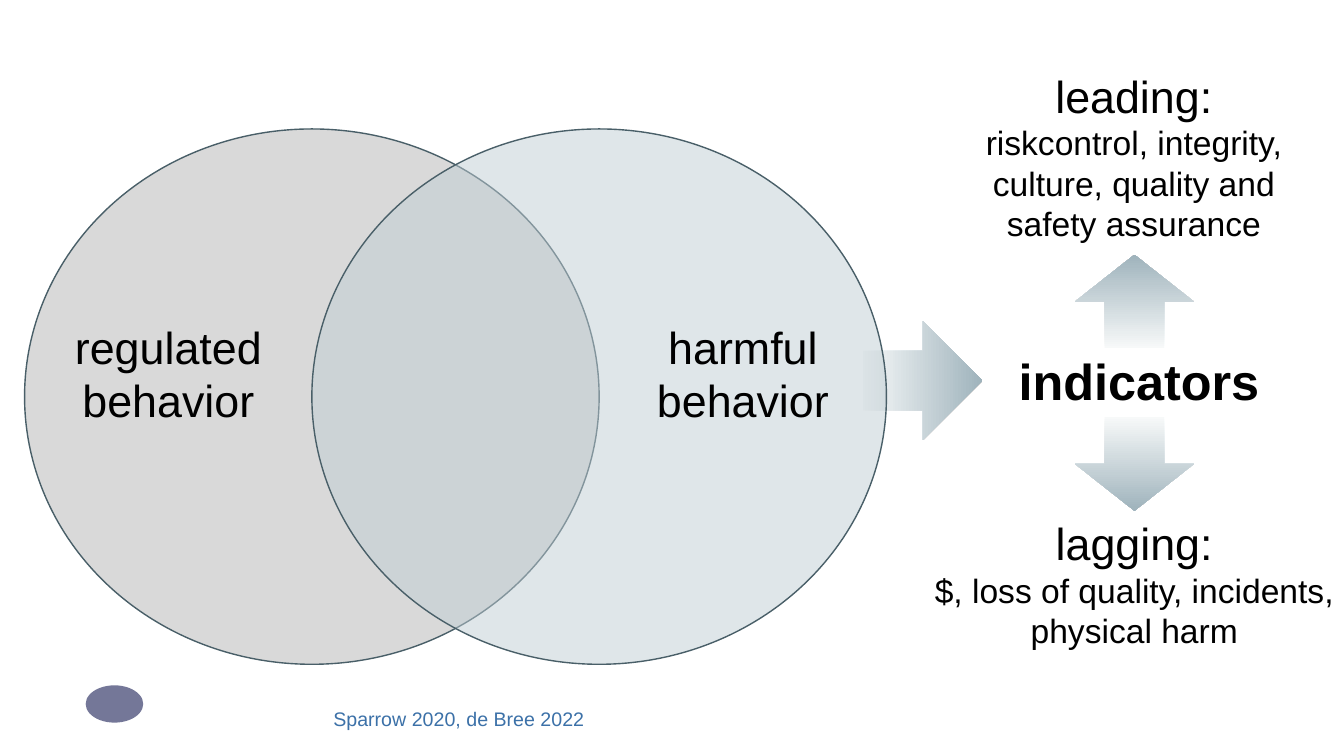
from dataclasses import dataclass

from lxml.etree import SubElement
from pptx import Presentation
from pptx.dml.color import RGBColor
from pptx.enum.shapes import MSO_SHAPE as Shape
from pptx.enum.text import MSO_AUTO_SIZE as AutoSize, PP_ALIGN as Align
from pptx.oxml.ns import qn
from pptx.util import Cm, Pt


@dataclass(frozen=True)
class Theme:
    font: str = "Arial"
    text: str = "000000"
    source: str = "3C71A8"
    emblem: str = "747798"
    outline: str = "495F68"
    regulated: str = "D9D9D9"
    harmful: str = "BFCDD3"
    arrow_tail: str = "F7F9F9"
    arrow_head: str = "9FB3BC"
    emphasis_size: int = 36
    heading_size: int = 32
    detail_size: int = 24
    source_size: int = 14


class SlideBuilder:
    def __init__(self, slide, theme):
        self.slide = slide
        self.theme = theme

    def add_preset(self, preset, left, top, width, height):
        shape = self.slide.shapes.add_shape(
            preset, Cm(left), Cm(top), Cm(width), Cm(height))
        shape.shadow.inherit = False
        shape.line.fill.background()
        return shape

    def add_emblem(self, left, top, width, height):
        emblem = self.add_preset(Shape.OVAL, left, top, width, height)
        emblem.fill.solid()
        emblem.fill.fore_color.rgb = RGBColor.from_string(self.theme.emblem)

    def add_circle(self, left, top, width, height, color, opacity=100):
        circle = self.add_preset(Shape.OVAL, left, top, width, height)
        circle.fill.solid()
        circle.fill.fore_color.rgb = RGBColor.from_string(color)
        circle.line.color.rgb = RGBColor.from_string(self.theme.outline)
        circle.line.width = Pt(1)
        if opacity < 100:
            color_element = circle.fill._xPr.find(qn("a:solidFill"))[0]
            SubElement(color_element, qn("a:alpha"), val=str(opacity * 1000))

    def add_arrow(self, center_x, center_y, length, breadth, rotation=0):
        """Block arrow that fades in from its tail; rotation 0 points right."""
        arrow = self.add_preset(Shape.RIGHT_ARROW, center_x - length / 2,
                                center_y - breadth / 2, length, breadth)
        arrow.rotation = rotation
        arrow.fill.gradient()
        arrow.fill.gradient_angle = 0
        colors = (self.theme.arrow_tail, self.theme.arrow_head)
        for position, (stop, color) in enumerate(zip(arrow.fill.gradient_stops, colors)):
            stop.position = position
            stop.color.rgb = RGBColor.from_string(color)

    def add_text(self, left, top, width, height, lines, color=None,
                 bold=False, align=Align.CENTER, inset=True):
        """Text box with one paragraph for each (text, size) pair in lines."""
        box = self.slide.shapes.add_textbox(Cm(left), Cm(top), Cm(width), Cm(height))
        frame = box.text_frame
        frame.word_wrap = True
        frame.auto_size = AutoSize.SHAPE_TO_FIT_TEXT
        if not inset:
            frame.margin_left = frame.margin_right = 0
            frame.margin_top = frame.margin_bottom = 0
        for index, (text, size) in enumerate(lines):
            paragraph = frame.add_paragraph() if index else frame.paragraphs[0]
            paragraph.text = text
            paragraph.alignment = align
            paragraph.font.name = self.theme.font
            paragraph.font.size = Pt(size)
            paragraph.font.bold = bold
            paragraph.font.color.rgb = RGBColor.from_string(color or self.theme.text)


def main():
    presentation = Presentation()
    presentation.slide_width = Cm(33.87)
    presentation.slide_height = Cm(19.05)
    blank_layout = presentation.slide_layouts[6]
    theme = Theme()
    builder = SlideBuilder(presentation.slides.add_slide(blank_layout), theme)
    heading, detail = theme.heading_size, theme.detail_size

    circle_top, circle_width, circle_height = 3.25, 14.48, 13.49
    label_top, label_width, label_height = 7.92, 9.25, 3
    indicator_x, indicator_y = 28.59, 9.59
    arrow_length, arrow_breadth = 3, 3.02

    builder.add_emblem(2.16, 17.27, 1.45, 0.94)
    builder.add_circle(0.62, circle_top, circle_width, circle_height, theme.regulated)
    builder.add_text(-0.38, label_top, label_width, label_height,
                     [("regulated", heading), ("behavior", heading)])

    builder.add_arrow(23.25, indicator_y, arrow_breadth, arrow_length)
    builder.add_text(24.97, 8.69, 7.47, 1.8,
                     [("indicators", theme.emphasis_size)], bold=True)
    builder.add_text(23.11, 12.88, 10.95, 3.68, [
        ("lagging:", heading),
        ("$, loss of quality, incidents, physical harm", detail)])
    builder.add_text(23.95, 1.6, label_width, 4.7, [
        ("leading:", heading),
        ("riskcontrol, integrity, culture, quality and safety assurance", detail)])
    for center_y, rotation in ((7.6, 270), (11.69, 90)):
        builder.add_arrow(indicator_x, center_y, 2.36, arrow_length, rotation)

    builder.add_text(8.4, 17.81, 11.4, 0.61,
                     [("Sparrow 2020, de Bree 2022", theme.source_size)],
                     color=theme.source, align=Align.LEFT, inset=False)

    builder.add_circle(7.86, circle_top, circle_width, circle_height,
                       theme.harmful, opacity=49)
    builder.add_text(14.1, label_top, label_width, label_height,
                     [("harmful", heading), ("behavior", heading)])

    presentation.save("out.pptx")


if __name__ == "__main__":
    main()
